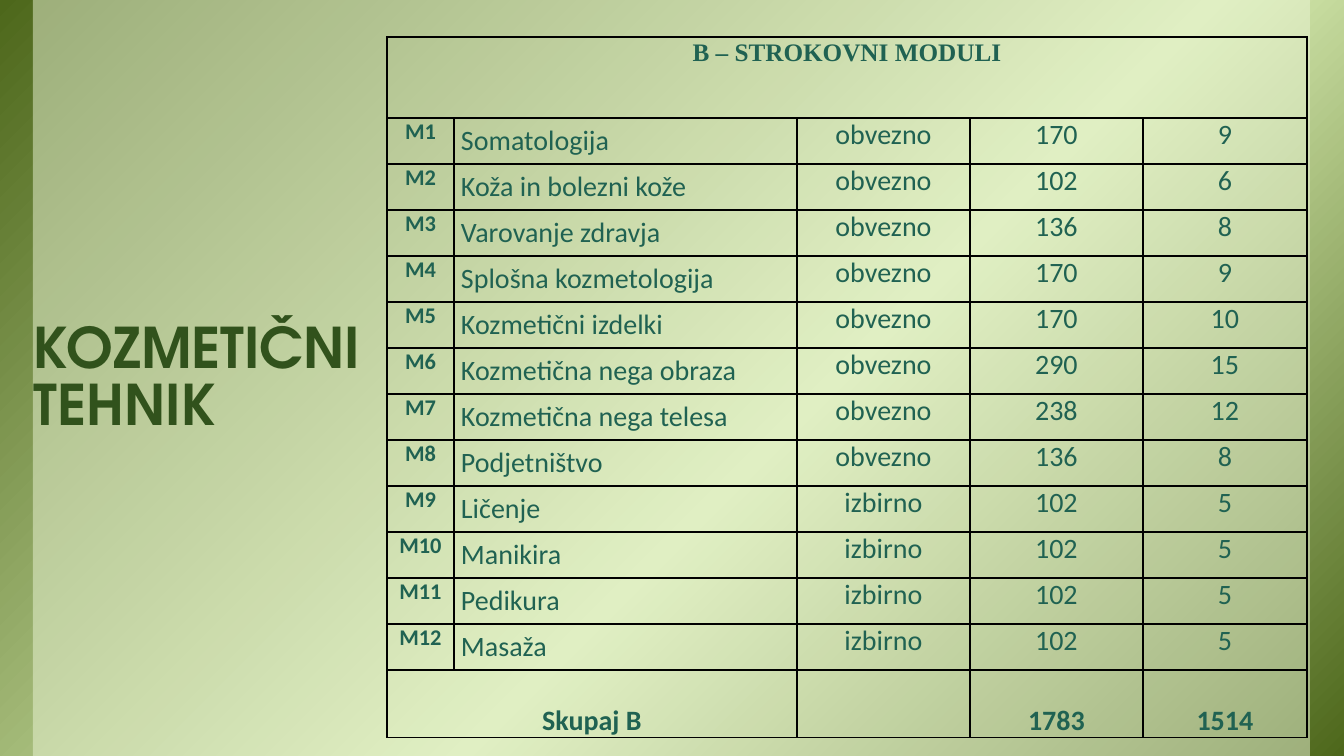
import copy
from typing import NamedTuple

import lxml.etree
import pptx
import pptx.dml.color
import pptx.enum.shapes
import pptx.enum.text
import pptx.oxml.ns
import pptx.util

RGB = pptx.dml.color.RGBColor
ALIGN = pptx.enum.text.PP_ALIGN
ANCHOR = pptx.enum.text.MSO_ANCHOR

SLIDE_WIDTH, SLIDE_HEIGHT = 1344, 756
EMU_PER_PX = 12192000 / SLIDE_WIDTH

OLIVE = RGB(0x4D, 0x67, 0x1B)
LIGHT_GREEN = RGB(0xD6, 0xEA, 0xAF)
PALE_GREEN = RGB(0xEB, 0xF5, 0xD7)
TITLE_GREEN = RGB(0x31, 0x52, 0x1C)
TEAL = RGB(0x20, 0x62, 0x52)
BLACK = RGB(0x00, 0x00, 0x00)

COLUMN_WIDTHS = (67, 343, 173, 173, 164)
HEADER_HEIGHT, MODULE_HEIGHT, TOTAL_HEIGHT = 81, 46, 68
TABLE_LEFT, TABLE_TOP = 387, 37
CELL_INSET = 7


class Module(NamedTuple):
    name: str
    status: str
    hours: int
    credits: int


class CellStyle(NamedTuple):
    size: int = 20
    bold: bool = False
    align: ALIGN = ALIGN.CENTER
    anchor: ANCHOR = ANCHOR.TOP
    font: str = "Calibri"
    line_spacing: float = 1.0


HEADER = CellStyle(size=18, bold=True, font="Times New Roman", line_spacing=1.07)
CODE = CellStyle(size=16, bold=True)
NAME = CellStyle(align=ALIGN.LEFT, anchor=ANCHOR.MIDDLE)
VALUE = CellStyle()
TOTAL = CellStyle(bold=True, anchor=ANCHOR.BOTTOM)

MODULES = (
    Module("Somatologija", "obvezno", 170, 9),
    Module("Koža in bolezni kože", "obvezno", 102, 6),
    Module("Varovanje zdravja", "obvezno", 136, 8),
    Module("Splošna kozmetologija", "obvezno", 170, 9),
    Module("Kozmetični izdelki", "obvezno", 170, 10),
    Module("Kozmetična nega obraza", "obvezno", 290, 15),
    Module("Kozmetična nega telesa", "obvezno", 238, 12),
    Module("Podjetništvo", "obvezno", 136, 8),
    Module("Ličenje", "izbirno", 102, 5),
    Module("Manikira", "izbirno", 102, 5),
    Module("Pedikura", "izbirno", 102, 5),
    Module("Masaža", "izbirno", 102, 5),
)


def px(length: int) -> pptx.util.Emu:
    return pptx.util.Emu(round(length * EMU_PER_PX))


def add_panel(page: pptx.slide.Slide, left: int, width: int) -> pptx.shapes.autoshape.Shape:
    """Add a full-height rectangle without line or shadow."""
    panel = page.shapes.add_shape(
        pptx.enum.shapes.MSO_SHAPE.RECTANGLE, px(left), 0, px(width), px(SLIDE_HEIGHT)
    )
    panel.shadow.inherit = False
    panel.line.fill.background()
    return panel


def add_backdrop(page: pptx.slide.Slide) -> None:
    """Add the diagonal gradient and the half-transparent panel on it."""
    fill = add_panel(page, 0, SLIDE_WIDTH).fill
    fill.gradient()
    fill.gradient_angle = 315
    stop_list = fill.gradient_stops[0]._gs.getparent()
    stop_list.append(copy.deepcopy(stop_list[-1]))
    for stop, position, color in zip(
        fill.gradient_stops, (0, 0.58, 1), (OLIVE, LIGHT_GREEN, OLIVE)
    ):
        stop.position = position
        stop.color.rgb = color

    veil = add_panel(page, 33, 1277)
    veil.fill.solid()
    veil.fill.fore_color.rgb = PALE_GREEN
    color_element = veil._element.spPr.find(".//" + pptx.oxml.ns.qn("a:srgbClr"))
    lxml.etree.SubElement(color_element, pptx.oxml.ns.qn("a:alpha"), val="50000")


def add_title(page: pptx.slide.Slide) -> None:
    box = page.shapes.add_textbox(px(21), px(290), px(402), px(154))
    frame = box.text_frame
    frame.word_wrap = True
    frame.vertical_anchor = ANCHOR.BOTTOM
    frame.margin_left = frame.margin_right = px(13)
    frame.margin_top = frame.margin_bottom = px(7)
    para = frame.paragraphs[0]
    para.text = "KOZMETIČNI TEHNIK"
    para.line_spacing = 0.85
    para.font.name = "TeX Gyre Adventor"
    para.font.size = pptx.util.Pt(40)
    para.font.bold = True
    para.font.color.rgb = TITLE_GREEN


def draw_borders(cell: pptx.table._Cell) -> None:
    properties = cell._tc.get_or_add_tcPr()
    for side in ("a:lnL", "a:lnR", "a:lnT", "a:lnB"):
        line = lxml.etree.SubElement(
            properties, pptx.oxml.ns.qn(side), w=str(pptx.util.Pt(1))
        )
        fill = lxml.etree.SubElement(line, pptx.oxml.ns.qn("a:solidFill"))
        lxml.etree.SubElement(fill, pptx.oxml.ns.qn("a:srgbClr"), val=str(BLACK))


def write_cell(cell: pptx.table._Cell, text: str, style: CellStyle) -> None:
    cell.vertical_anchor = style.anchor
    para = cell.text_frame.paragraphs[0]
    para.text = text
    para.alignment = style.align
    para.line_spacing = style.line_spacing
    para.font.name = style.font
    para.font.size = pptx.util.Pt(style.size)
    para.font.bold = style.bold
    para.font.color.rgb = TEAL


def add_module_table(page: pptx.slide.Slide) -> None:
    heights = (HEADER_HEIGHT, *[MODULE_HEIGHT] * len(MODULES), TOTAL_HEIGHT)
    table = page.shapes.add_table(
        len(heights), len(COLUMN_WIDTHS), px(TABLE_LEFT), px(TABLE_TOP),
        px(sum(COLUMN_WIDTHS)), px(sum(heights)),
    ).table
    table.first_row = table.horz_banding = False
    for column, width in zip(table.columns, COLUMN_WIDTHS):
        column.width = px(width)
    for row, height in zip(table.rows, heights):
        row.height = px(height)
    for cell in table.iter_cells():
        draw_borders(cell)
        cell.fill.background()
        cell.margin_left = cell.margin_right = px(CELL_INSET)
        cell.margin_top = cell.margin_bottom = 0

    last_row = len(heights) - 1
    table.cell(0, 0).merge(table.cell(0, len(COLUMN_WIDTHS) - 1))
    table.cell(last_row, 0).merge(table.cell(last_row, 1))

    write_cell(table.cell(0, 0), "B – STROKOVNI MODULI", HEADER)
    for number, module in enumerate(MODULES, start=1):
        write_cell(table.cell(number, 0), f"M{number}", CODE)
        write_cell(table.cell(number, 1), module.name, NAME)
        for column, value in enumerate(module[1:], start=2):
            write_cell(table.cell(number, column), str(value), VALUE)
    for column, text in ((0, "Skupaj B"), (3, "1783"), (4, "1514")):
        write_cell(table.cell(last_row, column), text, TOTAL)


def main() -> None:
    deck = pptx.Presentation()
    deck.slide_width, deck.slide_height = px(SLIDE_WIDTH), px(SLIDE_HEIGHT)
    page = deck.slides.add_slide(deck.slide_layouts[6])
    add_backdrop(page)
    add_title(page)
    add_module_table(page)
    deck.save("out.pptx")


if __name__ == "__main__":
    main()
